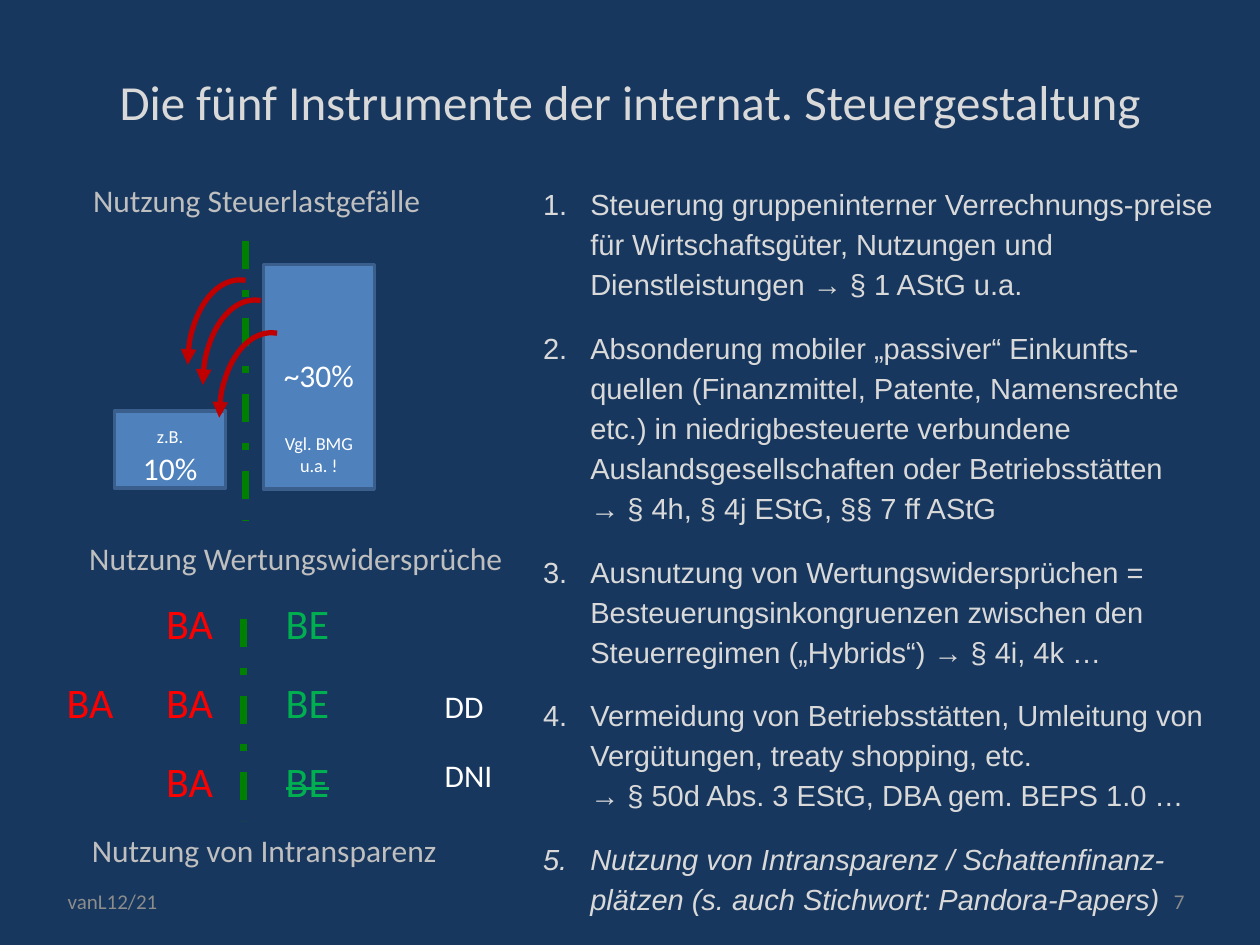
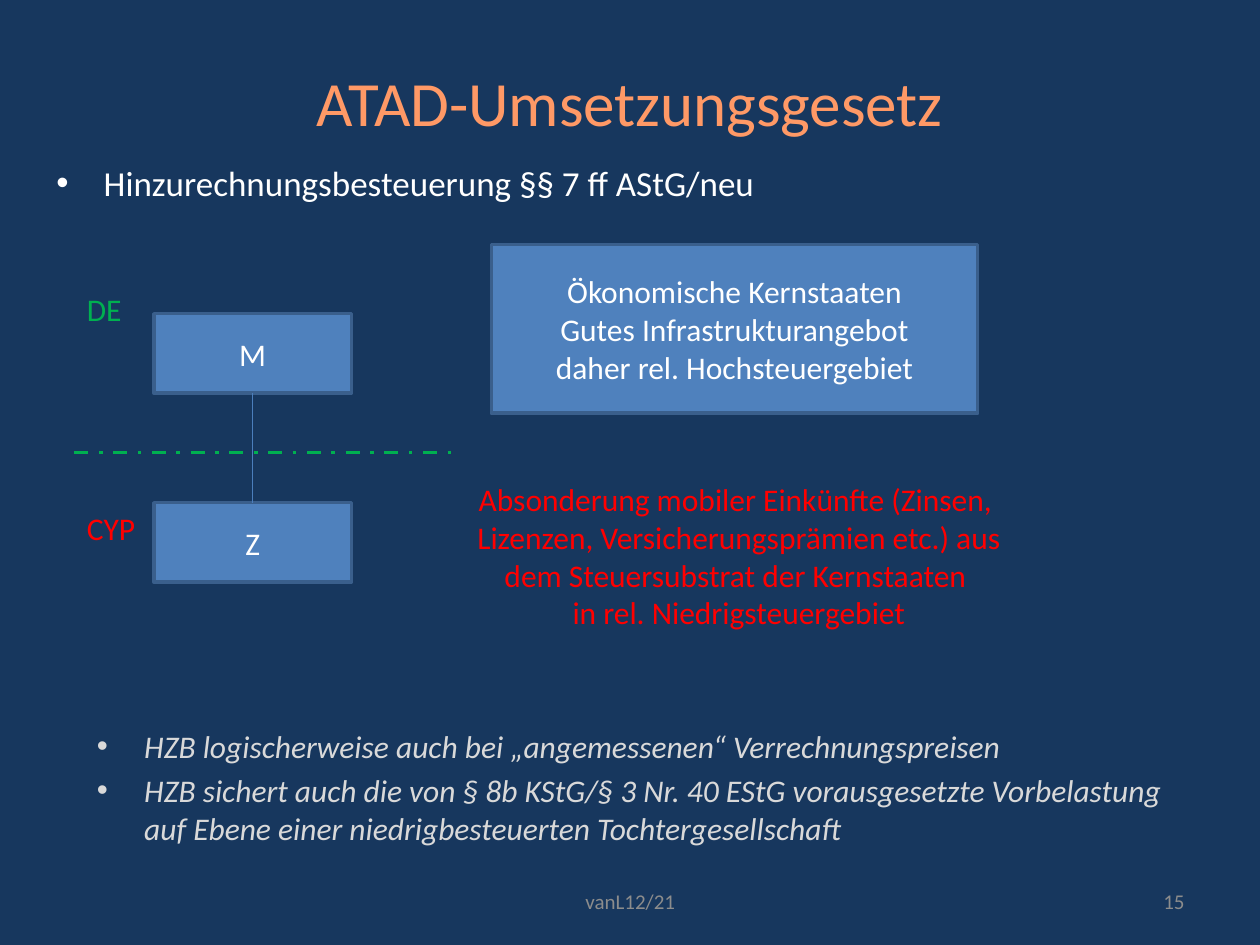
from copy import deepcopy

from lxml import etree
from pptx import Presentation
from pptx.dml.color import RGBColor
from pptx.enum.dml import MSO_LINE
from pptx.enum.shapes import MSO_CONNECTOR, MSO_SHAPE
from pptx.enum.text import MSO_ANCHOR, MSO_AUTO_SIZE, PP_ALIGN
from pptx.oxml.ns import qn
from pptx.util import Pt

NAVY = RGBColor(0x17, 0x37, 0x5E)
BLUE = RGBColor(0x4F, 0x81, 0xBD)
BLUE_EDGE = RGBColor(0x3A, 0x5F, 0x8C)
LINK_BLUE = RGBColor(0x4B, 0x7E, 0xBC)
WHITE = RGBColor(0xFF, 0xFF, 0xFF)
PALE = RGBColor(0xD9, 0xD9, 0xD9)
SILVER = RGBColor(0xBF, 0xBF, 0xBF)
GREY = RGBColor(0x8C, 0x8C, 0x8C)
ORANGE = RGBColor(0xFF, 0x99, 0x66)
RED = RGBColor(0xFF, 0x00, 0x00)
DARK_RED = RGBColor(0xC0, 0x00, 0x00)
GREEN = RGBColor(0x00, 0xB0, 0x50)
DARK_GREEN = RGBColor(0x00, 0x80, 0x00)

LEFT, CENTER, RIGHT = PP_ALIGN.LEFT, PP_ALIGN.CENTER, PP_ALIGN.RIGHT
TOP, MIDDLE, BOTTOM = MSO_ANCHOR.TOP, MSO_ANCHOR.MIDDLE, MSO_ANCHOR.BOTTOM
NO_FIT = MSO_AUTO_SIZE.NONE
RECT, ARC = MSO_SHAPE.RECTANGLE, MSO_SHAPE.ARC
STRAIGHT = MSO_CONNECTOR.STRAIGHT
DASH_DOT = MSO_LINE.DASH_DOT
SANS, BODY_FONT = "Calibri", "Arial"
SIDE_BOTTOM, SIDE_TOP = 2, 0
INDENT = 27


# Shared helpers
def points(*values):
    return [Pt(value) for value in values]


def write(paragraph, text, size, color, font=SANS, italic=None, strike=False):
    """Add text as runs, with a line break at every newline."""
    for index, part in enumerate(text.split("\n")):
        if index:
            paragraph.add_line_break()
            line_break = paragraph._p.findall(qn("a:br"))[-1]
            line_break.append(deepcopy(run._r.rPr))
        run = paragraph.add_run()
        run.text = part
        run.font.name, run.font.size, run.font.italic = font, Pt(size), italic
        run.font.color.rgb = color
        if strike:
            run._r.get_or_add_rPr().set("strike", "sngStrike")


def next_paragraph(frame, index, align=LEFT):
    paragraph = frame.add_paragraph() if index else frame.paragraphs[0]
    paragraph.alignment = align
    return paragraph


def add_label(slide, box, text, size, color, align=LEFT, anchor=TOP,
              wrap=False, strike=False):
    frame = slide.shapes.add_textbox(*points(*box)).text_frame
    frame.word_wrap, frame.vertical_anchor = wrap, anchor
    write(next_paragraph(frame, 0, align), text, size, color, strike=strike)


def add_block(slide, box, paragraphs, anchor=MIDDLE):
    """Blue rectangle; each paragraph is a list of (text, size) pairs."""
    block = slide.shapes.add_shape(RECT, *points(*box))
    block.shadow.inherit = False
    block.fill.solid()
    block.fill.fore_color.rgb = BLUE
    block.line.color.rgb, block.line.width = BLUE_EDGE, Pt(2)
    block.text_frame.word_wrap = True
    block.text_frame.vertical_anchor = anchor
    for index, parts in enumerate(paragraphs):
        paragraph = next_paragraph(block.text_frame, index, CENTER)
        for text, size in parts:
            write(paragraph, text, size, WHITE)
    return block


def add_line(slide, ends, color, width, dash=None):
    line = slide.shapes.add_connector(STRAIGHT, *points(*ends))
    line.line.color.rgb, line.line.width = color, Pt(width)
    if dash is not None:
        line.line.dash_style = dash
    etree.SubElement(line._element.spPr, qn("a:effectLst"))
    return line


def place(shape, box):
    shape.left, shape.top, shape.width, shape.height = points(*box)


def fill_list(frame, items, size, color, font=SANS, numbered=False,
              line_spacing=None, after=0):
    """Write (text, italic) items as a bulleted or numbered list."""
    frame.word_wrap, frame.auto_size = True, NO_FIT
    for index, (text, italic) in enumerate(items):
        paragraph = next_paragraph(frame, index)
        paragraph.space_before, paragraph.space_after = points(0.2 * size, after)
        if line_spacing:
            paragraph.line_spacing = line_spacing
        properties = paragraph._p.get_or_add_pPr()
        properties.set("marL", str(Pt(INDENT)))
        properties.set("indent", str(-Pt(INDENT)))
        if numbered:
            etree.SubElement(properties, qn("a:buFont"), typeface="+mj-lt")
            etree.SubElement(properties, qn("a:buAutoNum"), type="arabicPeriod")
        else:
            etree.SubElement(properties, qn("a:buFont"), typeface="Arial")
            etree.SubElement(properties, qn("a:buChar"), char="•")
        write(paragraph, text, size, color, font, italic)


def start_slide(deck, title, size, color, number, footer_left):
    """Titled slide with footer and page number."""
    slide = deck.slides.add_slide(deck.slide_layouts[1])
    heading = slide.shapes.title
    place(heading, (36, 21.6, 648, 72.7))
    heading.text_frame.vertical_anchor = MIDDLE
    heading.text_frame.auto_size = NO_FIT
    write(next_paragraph(heading.text_frame, 0, CENTER), title, size, color)
    add_label(slide, (footer_left, 500.4, 228, 28.8), "vanL12/21", 12, GREY,
              CENTER, MIDDLE, wrap=True)
    add_label(slide, (516, 500.4, 168, 28.8), number, 12, GREY,
              RIGHT, MIDDLE, wrap=True)
    return slide


# Regions of the instruments slide
def draw_tax_gradient(slide, left, top):
    """Low-tax and high-tax bars with income shifted across the border."""
    border = left + 74.9
    add_line(slide, (border, top, border, top + 160.5), DARK_GREEN, 4, DASH_DOT)
    high = add_block(slide, (left + 85, top + 13.7, 63.4, 128.2),
                     [[("~30%", 18)], [("Vgl. BMG u.a. !", 10.5)]], BOTTOM)
    high.text_frame.margin_bottom = Pt(7.4)
    high.text_frame.paragraphs[1].space_before = Pt(22)
    add_block(slide, (left, top + 97.2, 63.4, 44.2),
              [[("z.B.", 10.5), (" 10%", 18)]])
    for x, y in ((23.1, 41.1), (31.7, 52.6), (41.1, 71.3)):
        shift = slide.shapes.add_shape(ARC, *points(left + x, top + y, 97.2, 59.8))
        shift.shadow.inherit = False
        shift.rotation = 270
        shift.adjustments[0], shift.adjustments[1] = 162, 2.261
        shift.fill.background()
        shift.line.color.rgb, shift.line.width = DARK_RED, Pt(3)
        etree.SubElement(shift.line._get_or_add_ln(), qn("a:headEnd"),
                         type="triangle")


def draw_mismatches(slide, left, top):
    """Deductions (BA) against income (BE) on both sides of the border."""
    border = left + 108
    add_line(slide, (border, top + 15.8, border, top + 131.7),
             DARK_GREEN, 4, DASH_DOT)
    pitch, inner, outer = 45.36, 56.9, 125.2
    for row in range(3):
        y = top + row * pitch
        add_label(slide, (left + inner, y, 41.8, 36), "BA", 24, RED)
        add_label(slide, (left + outer, y, 39.6, 36), "BE", 24, GREEN,
                  strike=row == 2)
    add_label(slide, (left, top + pitch, 41.8, 36), "BA", 24, RED)
    add_label(slide, (left + 216, top + 51.1, 36.7, 28.8), "DD", 18, WHITE)
    add_label(slide, (left + 216, top + 90.7, 41.8, 28.8), "DNI", 18, WHITE)


def build_instruments(deck):
    slide = start_slide(
        deck, "Die fünf Instrumente der internat. Steuergestaltung",
        28, PALE, "7", -49.7)
    instruments = slide.placeholders[1]
    place(instruments, (303.1, 100.1, 402.5, 439.9))
    fill_list(instruments.text_frame, [
        ("Steuerung gruppeninterner Verrechnungs-preise für Wirtschaftsgüter, "
         "Nutzungen und Dienstleistungen → § 1 AStG u.a.", None),
        ("Absonderung mobiler „passiver“ Einkunfts-quellen (Finanzmittel, "
         "Patente, Namensrechte etc.) in niedrigbesteuerte verbundene "
         "Auslandsgesellschaften oder Betriebsstätten \n"
         "→ § 4h, § 4j EStG, §§ 7 ff AStG", None),
        ("Ausnutzung von Wertungswidersprüchen = Besteuerungsinkongruenzen "
         "zwischen den Steuerregimen („Hybrids“) → § 4i, 4k …", None),
        ("Vermeidung von Betriebsstätten, Umleitung von Vergütungen, treaty "
         "shopping, etc. \n→ § 50d Abs. 3 EStG, DBA gem. BEPS 1.0 …", None),
        ("Nutzung von Intransparenz / Schattenfinanz-plätzen (s. auch "
         "Stichwort: Pandora-Papers)", True),
    ], 16.6, PALE, BODY_FONT, numbered=True, line_spacing=1.15, after=10)
    for left, top, width, text in (
            (46.1, 100.1, 203.8, "Nutzung Steuerlastgefälle"),
            (43.9, 304.6, 253.4, "Nutzung Wertungswidersprüche"),
            (45.4, 471.6, 213.8, "Nutzung von Intransparenz")):
        add_label(slide, (left, top, width, 28.8), text, 18, SILVER)
    draw_tax_gradient(slide, 65.5, 137.5)
    draw_mismatches(slide, 31, 337.7)


# Regions of the ATAD slide
def draw_holding(slide, left, top):
    """Parent M in DE holding Z in CYP, with the border between them."""
    add_line(slide, (left, top + 96.5, left + 221, top + 96.5),
             GREEN, 2, DASH_DOT)
    add_label(slide, (left, top, 34.6, 28.8), "DE", 18, GREEN)
    add_label(slide, (left, top + 125.3, 42.5, 28.8), "CYP", 18, RED)
    parent, subsidiary = [
        add_block(slide, (left + 45.4, top + y, 113, 45.4), [[(name, 18)]])
        for name, y in (("M", 17.3), ("Z", 125.3))]
    holding = add_line(slide, (0, 0, 0, 0), LINK_BLUE, 0.75)
    holding.begin_connect(parent, SIDE_BOTTOM)
    holding.end_connect(subsidiary, SIDE_TOP)


def draw_tax_zones(slide, left, top):
    """High-tax core states above the low-tax destination."""
    add_block(slide, (left + 23, top, 277.9, 96.5), [
        [("Ökonomische Kernstaaten\nGutes Infrastrukturangebot", 18)],
        [("daher rel. Hochsteuergebiet", 18)]])
    add_label(slide, (left, top + 131, 329, 116.6),
              "Absonderung mobiler Einkünfte (Zinsen, \n"
              "Lizenzen, Versicherungsprämien etc.) aus dem Steuersubstrat "
              "der Kernstaaten \nin rel. Niedrigsteuergebiet",
              18, RED, CENTER, wrap=True)


def build_atad(deck):
    slide = start_slide(deck, "ATAD-Umsetzungsgesetz", 36, ORANGE, "15", 246.2)
    draw_holding(slide, 42.5, 162)
    draw_tax_zones(slide, 257.8, 139.7)
    conclusions = slide.placeholders[1]
    place(conclusions, (48.2, 411.8, 623.5, 90.7))
    fill_list(conclusions.text_frame, [
        ("HZB logischerweise auch bei „angemessenen“ Verrechnungspreisen", True),
        ("HZB sichert auch die von § 8b KStG/§ 3 Nr. 40 EStG vorausgesetzte "
         "Vorbelastung auf Ebene einer niedrigbesteuerten "
         "Tochtergesellschaft", True),
    ], 18, PALE)
    topic = slide.shapes.add_textbox(*points(25.2, 88.6, 674.6, 39.6))
    fill_list(topic.text_frame,
              [("Hinzurechnungsbesteuerung §§ 7 ff AStG/neu", None)], 20, WHITE)


def main():
    deck = Presentation()
    deck.slide_width, deck.slide_height = points(720, 540)
    backdrop = deck.slide_master.background.fill
    backdrop.solid()
    backdrop.fore_color.rgb = NAVY
    build_instruments(deck)
    build_atad(deck)
    deck.save("out.pptx")


if __name__ == "__main__":
    main()
